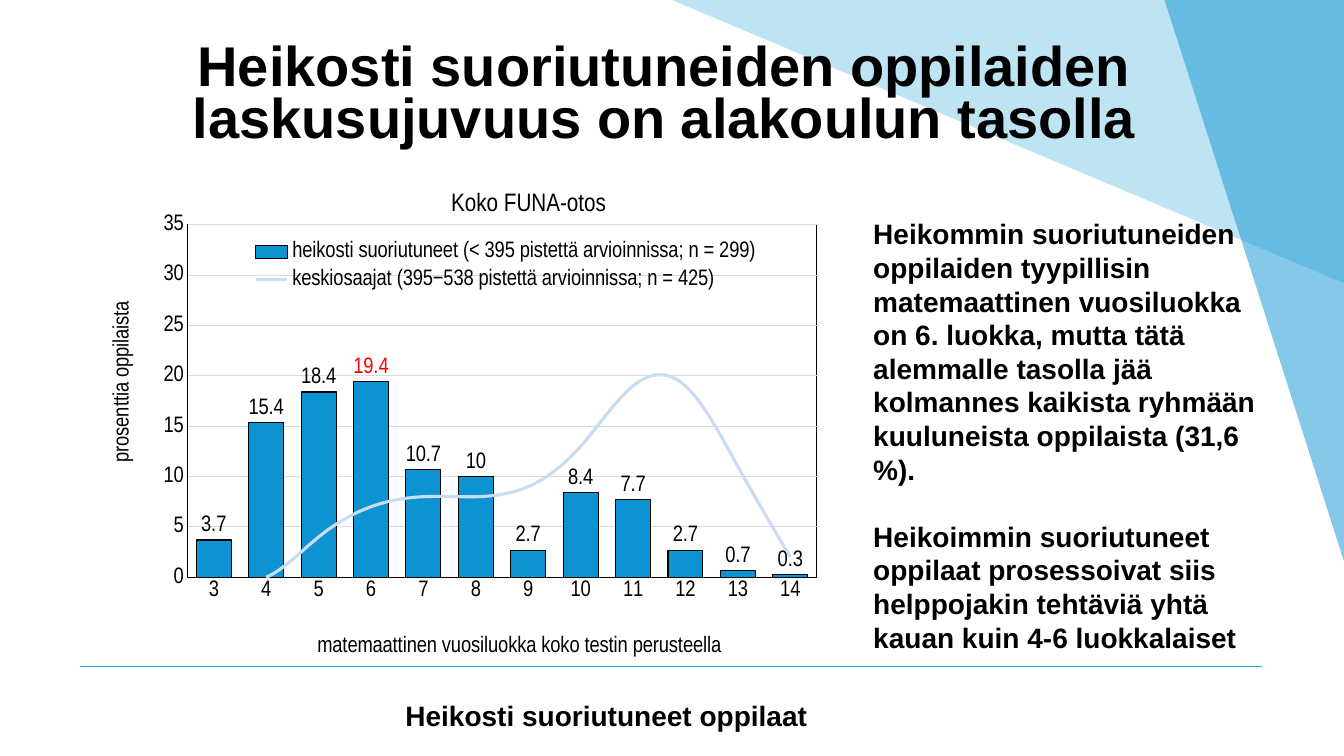
from lxml import etree
from pptx import Presentation
from pptx.chart.data import CategoryChartData
from pptx.dml.color import RGBColor
from pptx.enum.chart import (XL_CHART_TYPE, XL_LABEL_POSITION, XL_LEGEND_POSITION,
                             XL_MARKER_STYLE, XL_TICK_MARK)
from pptx.enum.shapes import MSO_CONNECTOR
from pptx.enum.text import PP_ALIGN
from pptx.oxml import parse_xml
from pptx.oxml.ns import nsdecls, qn
from pptx.util import Inches, Pt

COLUMNS = XL_CHART_TYPE.COLUMN_CLUSTERED
OUTSIDE = XL_LABEL_POSITION.OUTSIDE_END
LEGEND_BOTTOM = XL_LEGEND_POSITION.BOTTOM
NO_MARKER = XL_MARKER_STYLE.NONE
NO_TICK = XL_TICK_MARK.NONE
STRAIGHT = MSO_CONNECTOR.STRAIGHT
LEFT, CENTER = PP_ALIGN.LEFT, PP_ALIGN.CENTER

BLACK = RGBColor(0x00, 0x00, 0x00)
WHITE = RGBColor(0xFF, 0xFF, 0xFF)
RED = RGBColor(0xFF, 0x00, 0x00)
SKY = RGBColor(0x28, 0xA7, 0xDA)
BLUE = RGBColor(0x0D, 0x93, 0xD2)
PALE = RGBColor(0xC8, 0xDD, 0xF1)
GRID = RGBColor(0xD9, 0xD9, 0xD9)
FONT, CHART_FONT = "Arial", "Arial Narrow"

HEADING = ["Heikosti suoriutuneiden oppilaiden laskusujuvuus on alakoulun tasolla"]
FINDINGS = [
    "Heikommin suoriutuneiden oppilaiden tyypillisin matemaattinen vuosiluokka on 6. luokka, "
    "mutta tätä alemmalle tasolla jää kolmannes kaikista ryhmään kuuluneista oppilaista (31,6 %).",
    "Heikoimmin suoriutuneet oppilaat prosessoivat siis helppojakin tehtäviä yhtä kauan "
    "kuin 4-6 luokkalaiset",
]
CAPTION = ["Heikosti suoriutuneet oppilaat"]

CHART_TITLE = "Koko FUNA-otos"
GRADE_TITLE = "matemaattinen vuosiluokka koko testin perusteella"
SHARE_TITLE = "prosenttia oppilaista"
GRADES = [str(grade) for grade in range(3, 15)]
WEAK = ("heikosti suoriutuneet (< 395 pistettä arvioinnissa; n = 299)",
        (3.7, 15.4, 18.4, 19.4, 10.7, 10, 2.7, 8.4, 7.7, 2.7, 0.7, 0.3))
AVERAGE = ("keskiosaajat (395−538 pistettä arvioinnissa; n = 425)",
           (0, 0, 4, 7, 8, 8, 9, 13, 19, 19, 11, 2))
PEAK = WEAK[1].index(max(WEAK[1]))

RAYS = [
    (((50, 0), (100, 37.47), (100, 0)), SKY, 30),
    (((86.65, 0), (100, 74.27), (100, 0)), BLUE, 50),
]
RULE = (5.93, 88.13, 93.92, 88.13)
HEADING_AREA = (5.4, 5.9, 88, 9.73)
FINDINGS_AREA = (64.97, 28.67, 29.33, 58.4)
CHART_AREA = (7.35, 24, 55.06, 63.87)
CAPTION_AREA = (30.16, 92.4, 31.06, 4.53)

deck = Presentation()
deck.slide_width, deck.slide_height = Inches(13.33), Inches(7.5)
slide = deck.slides.add_slide(deck.slide_layouts[6])


def lengths(percents):
    sides = (deck.slide_width, deck.slide_height)
    return [round(sides[i % 2] * percent / 100) for i, percent in enumerate(percents)]


def add_ray(corners, color, opacity):
    points = [lengths(corner) for corner in corners]
    builder = slide.shapes.build_freeform(*points[0], scale=1.0)
    builder.add_line_segments(points[1:], close=True)
    ray = builder.convert_to_shape()
    ray.shadow.inherit = False
    ray.line.fill.background()
    ray.fill.solid()
    ray.fill.fore_color.rgb = color
    tint = ray._element.spPr.find(qn("a:solidFill"))[0]
    etree.SubElement(tint, qn("a:alpha"), val=str(opacity * 1000))


def add_text(area, paragraphs, size, spacing, align=LEFT):
    frame = slide.shapes.add_textbox(*lengths(area)).text_frame
    frame.word_wrap = True
    frame.margin_left = frame.margin_right = frame.margin_top = frame.margin_bottom = 0
    for i, wording in enumerate(paragraphs):
        paragraph = frame.add_paragraph() if i else frame.paragraphs[0]
        paragraph.alignment = align
        paragraph.line_spacing = spacing
        if i:
            paragraph.space_before = spacing
        run = paragraph.add_run()
        run.text = wording
        set_font(run.font, size, FONT, bold=True)


def set_font(font, size, name=CHART_FONT, color=BLACK, bold=False):
    font.size, font.name, font.bold = Pt(size), name, bold
    font.color.rgb = color


def set_line(line, color, width):
    line.color.rgb = color
    line.width = Pt(width)


def set_layout(element, x, y, w=None, h=None, inner=False):
    target = '<c:layoutTarget val="inner"/>' if inner else ""
    modes = '<c:xMode val="edge"/><c:yMode val="edge"/>'
    sizes = "".join(f'<c:{key} val="{value}"/>'
                    for key, value in zip("xywh", (x, y, w, h)) if value is not None)
    layout = parse_xml(f'<c:layout {nsdecls("c")}><c:manualLayout>{target}{modes}{sizes}'
                       '</c:manualLayout></c:layout>')
    for old in element.findall(qn("c:layout")):
        element.remove(old)
    before = [child for child in element if child.tag in (qn("c:tx"), qn("c:legendPos"))]
    element.insert(len(before), layout)


def add_title(owner, wording, size, x, y):
    title = owner.chart_title if hasattr(owner, "chart_title") else owner.axis_title
    run = title.text_frame.paragraphs[0].add_run()
    run.text = wording
    set_font(run.font, size)
    set_layout(title._element, x, y)


def split_off_line(chart):
    bars = chart.plots[0]._element
    average = bars.findall(qn("c:ser"))[1]
    for bar_setting in average.findall(qn("c:invertIfNegative")):
        average.remove(bar_setting)
    lines = parse_xml(f'<c:lineChart {nsdecls("c")}><c:grouping val="standard"/>'
                      '<c:varyColors val="0"/></c:lineChart>')
    lines.append(average)
    etree.SubElement(lines, qn("c:marker"), val="1")
    for axis in bars.findall(qn("c:axId")):
        etree.SubElement(lines, qn("c:axId"), val=axis.get("val"))
    bars.addnext(lines)


def add_results_chart():
    results = CategoryChartData()
    results.categories = GRADES
    for name, shares in (WEAK, AVERAGE):
        results.add_series(name, shares)
    chart = slide.shapes.add_chart(COLUMNS, *lengths(CHART_AREA), results).chart
    set_font(chart.font, 16)
    split_off_line(chart)

    bars, lines = chart.plots
    bars.gap_width = 50
    bars.vary_by_categories = False
    weak, average = bars.series[0], lines.series[0]
    weak.format.fill.solid()
    weak.format.fill.fore_color.rgb = BLUE
    set_line(weak.format.line, BLACK, 0.75)
    labels = weak.data_labels
    labels.show_value = True
    labels.position = OUTSIDE
    set_font(labels.font, 16)
    peak = weak.points[PEAK].data_label
    set_font(peak.font, 16, color=RED)
    peak.position = OUTSIDE
    average.smooth = True
    average.marker.style = NO_MARKER
    set_line(average.format.line, PALE, 2.25)

    grades, shares = chart.category_axis, chart.value_axis
    for axis in (grades, shares):
        axis.major_tick_mark = axis.minor_tick_mark = NO_TICK
        set_font(axis.tick_labels.font, 16)
    set_line(grades.format.line, BLACK, 0.75)
    shares.format.line.fill.background()
    shares.minimum_scale, shares.maximum_scale, shares.major_unit = 0, 35, 5
    set_line(shares.major_gridlines.format.line, GRID, 0.75)

    add_title(chart, CHART_TITLE, 18, 0.47, 0.01)
    add_title(grades, GRADE_TITLE, 16, 0.29, 0.93)
    add_title(shares, SHARE_TITLE, 16, 0.01, 0.24)
    chart.has_legend = True
    chart.legend.position = LEGEND_BOTTOM
    chart.legend.include_in_layout = False
    set_font(chart.legend.font, 16)
    set_layout(chart.legend._element, 0.2, 0.11, 0.7, 0.13)

    plot_area = chart._chartSpace.chart.plotArea
    set_layout(plot_area, 0.12, 0.09, 0.85, 0.73, inner=True)
    plot_area.append(parse_xml(
        f'<c:spPr {nsdecls("c", "a")}><a:solidFill><a:srgbClr val="{WHITE}"/></a:solidFill>'
        f'<a:ln w="{Pt(0.75)}"><a:solidFill><a:srgbClr val="{BLACK}"/></a:solidFill></a:ln></c:spPr>'))


rule = slide.shapes.add_connector(STRAIGHT, *lengths(RULE))
set_line(rule.line, SKY, 1)
etree.SubElement(rule._element.spPr, qn("a:effectLst"))
for ray in RAYS:
    add_ray(*ray)
add_text(HEADING_AREA, HEADING, 40, 0.78, CENTER)
add_text(FINDINGS_AREA, FINDINGS, 20, Pt(24))
add_results_chart()
add_text(CAPTION_AREA, CAPTION, 20, Pt(24))
deck.save("out.pptx")
